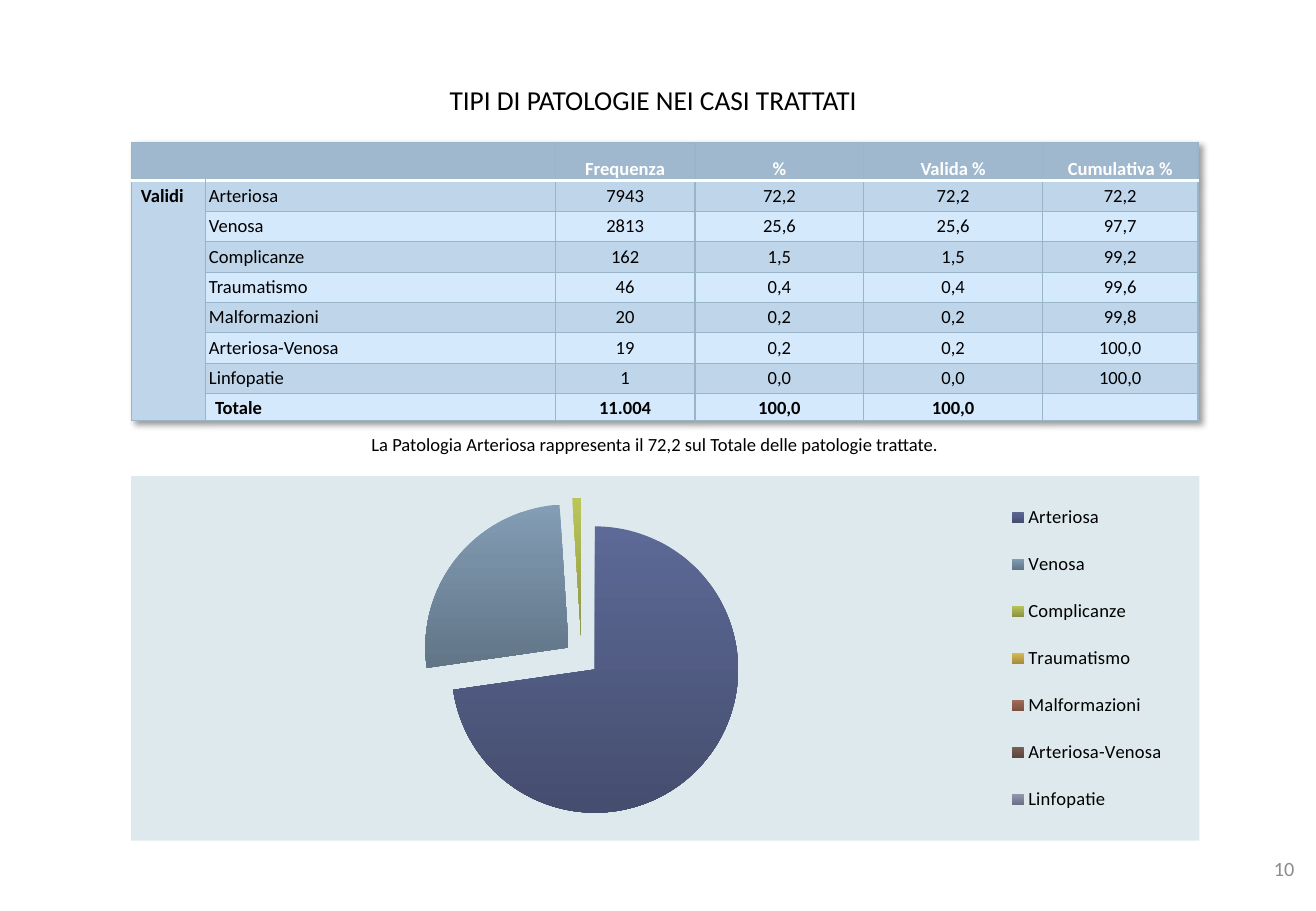
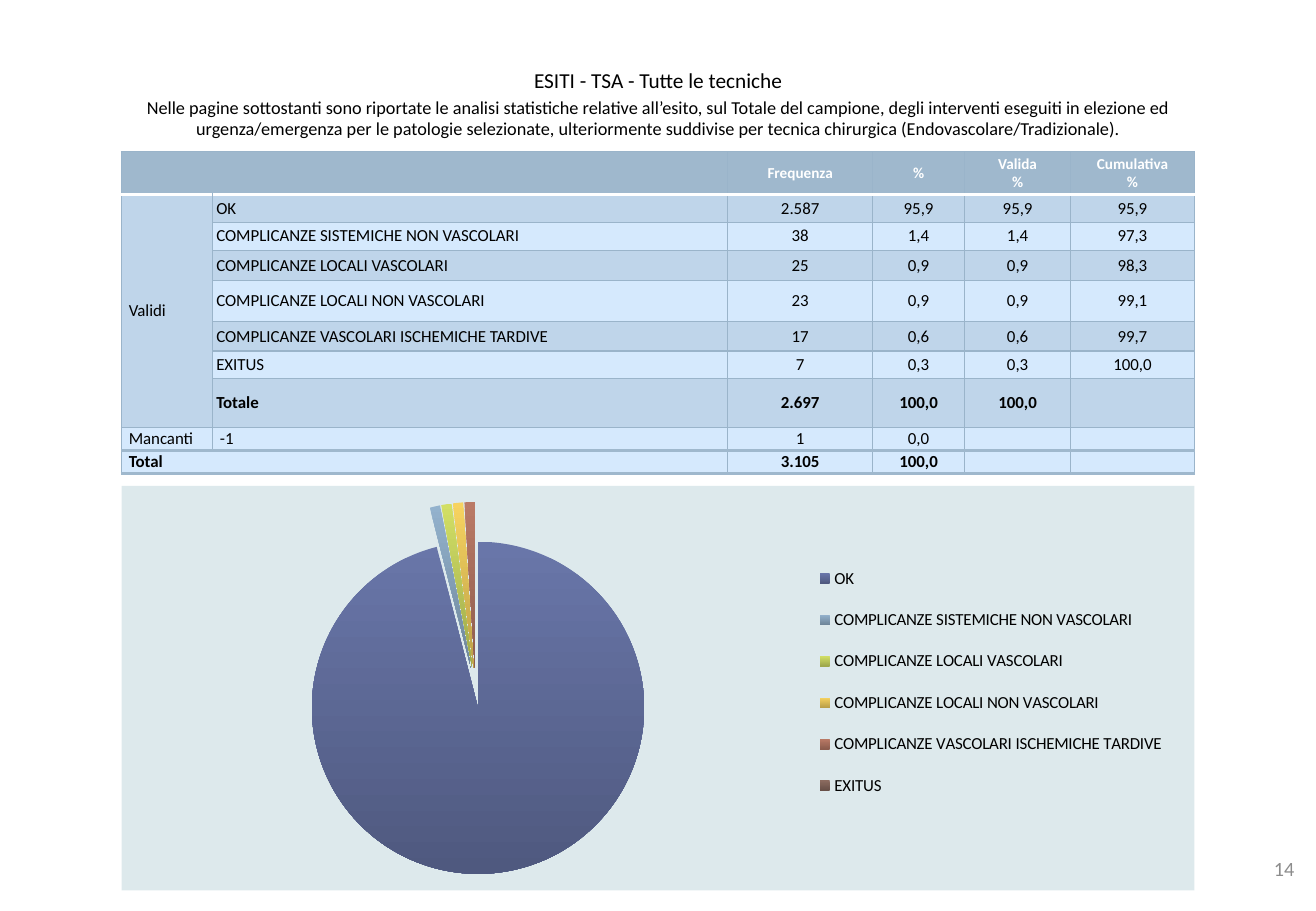
import lxml.etree
import pptx
import pptx.chart.data
import pptx.dml.color
import pptx.enum.chart
import pptx.enum.text
import pptx.oxml
import pptx.oxml.ns
import pptx.util

Inches, Pt, qn = pptx.util.Inches, pptx.util.Pt, pptx.oxml.ns.qn
NS = pptx.oxml.ns.nsdecls("a", "c")
ALIGN = pptx.enum.text.PP_ALIGN
ANCHOR = pptx.enum.text.MSO_ANCHOR

FONT = "Calibri"
BLACK, WHITE, GREY = "000000", "FFFFFF", "8C8C8C"
HEAD, DARK, LIGHT, EDGE = "9FB8CD", "BFD5EA", "D5E9FD", "9AB4CA"
PANEL = "DDE9EC"
SLICES = ["6C7AAE", "98B7D3", "D9E668", "FFDA63", "C07E69", "8F6E62", "AAB0CE"]


def rgb(value, shade=1):
    color = pptx.dml.color.RGBColor.from_string(value)
    return pptx.dml.color.RGBColor(*(round(part * shade) for part in color))


def layout(x, y, w, h, target=""):
    return pptx.oxml.parse_xml(
        f'<c:layout {NS}><c:manualLayout>{target}'
        '<c:xMode val="edge"/><c:yMode val="edge"/>'
        f'<c:x val="{x}"/><c:y val="{y}"/><c:w val="{w}"/><c:h val="{h}"/>'
        '</c:manualLayout></c:layout>')


pages = [
    dict(
        number="10",
        title=[("TIPI DI PATOLOGIE NEI CASI TRATTATI", 16.2)],
        title_box=(0.5, 0.62, 9.75, 0.4),
        caption="La Patologia Arteriosa rappresenta il 72,2 sul Totale delle patologie trattate.",
        left=1.08, top=1.17,
        cols=[0.61, 2.88, 1.15, 1.39, 1.47, 1.28],
        heights=[0.32] + [0.25] * 7 + [0.22],
        rows=[
            ["", "", "Frequenza", "%", "Valida %", "Cumulativa %"],
            ["Validi", "Arteriosa", "7943", "72,2", "72,2", "72,2"],
            ["", "Venosa", "2813", "25,6", "25,6", "97,7"],
            ["", "Complicanze", "162", "1,5", "1,5", "99,2"],
            ["", "Traumatismo", "46", "0,4", "0,4", "99,6"],
            ["", "Malformazioni", "20", "0,2", "0,2", "99,8"],
            ["", "Arteriosa-Venosa", "19", "0,2", "0,2", "100,0"],
            ["", "Linfopatie", "1", "0,0", "0,0", "100,0"],
            ["", "Totale", "11.004", "100,0", "100,0", ""],
        ],
        merges=[(0, 0, 0, 1), (1, 0, 8, 0)],
        size=11, head_size=11, head_anchor=ANCHOR.BOTTOM, spacing=1.15,
        side_anchor=ANCHOR.TOP, side_bold=True, pad=0.08, wide_rows=[8],
        thick_edges={1: WHITE}, shadow=True,
        chart_box=(1.08, 3.92, 8.79, 3), values=[72, 26, 1, 0, 0, 0, 0],
        shades=(0.86, 0.64),
        plot=(0.022, 0.06, 0.8, 0.88), legend=(0.81, 0.015, 0.17, 0.97),
    ),
    dict(
        number="14",
        title=[
            ("ESITI - TSA - Tutte le tecniche", 12.6),
            ("Nelle pagine sottostanti sono riportate le analisi statistiche relative "
             "all’esito, sul Totale del campione, degli interventi eseguiti in elezione ed "
             "urgenza/emergenza per le patologie selezionate, ulteriormente suddivise per "
             "tecnica chirurgica (Endovascolare/Tradizionale).", 10.8),
        ],
        title_box=(1, 0.5, 8.83, 0.7),
        caption="",
        left=1, top=1.25,
        cols=[0.75, 4.24, 1.19, 0.76, 0.87, 1.02],
        heights=[0.35, 0.23, 0.23, 0.25, 0.34, 0.24, 0.23, 0.4, 0.19, 0.19],
        rows=[
            ["", "", "Frequenza", "%", "Valida\n%", "Cumulativa\n%"],
            ["Validi", "OK", "2.587", "95,9", "95,9", "95,9"],
            ["", "COMPLICANZE SISTEMICHE NON VASCOLARI", "38", "1,4", "1,4", "97,3"],
            ["", "COMPLICANZE LOCALI VASCOLARI", "25", "0,9", "0,9", "98,3"],
            ["", "COMPLICANZE LOCALI NON VASCOLARI", "23", "0,9", "0,9", "99,1"],
            ["", "COMPLICANZE VASCOLARI ISCHEMICHE TARDIVE", "17", "0,6", "0,6", "99,7"],
            ["", "EXITUS", "7", "0,3", "0,3", "100,0"],
            ["", "Totale", "2.697", "100,0", "100,0", ""],
            ["Mancanti", "-1", "1", "0,0", "", ""],
            ["Total", "", "3.105", "100,0", "", ""],
        ],
        merges=[(0, 0, 0, 1), (1, 0, 7, 0), (9, 0, 9, 1)],
        size=10, head_size=9, head_anchor=ANCHOR.MIDDLE, spacing=1.0,
        side_anchor=ANCHOR.MIDDLE, side_bold=False, pad=0.06, wide_rows=[8, 9],
        thick_edges={1: WHITE, 9: HEAD, 10: HEAD}, shadow=False,
        chart_box=(1, 4, 8.83, 3.33), values=[96, 1, 1, 1, 1, 0],
        shades=(0.97, 0.73),
        plot=(0.02, 0.04, 0.62, 0.92), legend=(0.64, 0.15, 0.34, 0.67),
    ),
]

prs = pptx.Presentation()
prs.slide_width, prs.slide_height = Inches(10.83), Inches(7.5)

for page in pages:
    s = prs.slides.add_slide(prs.slide_layouts[5])
    title = s.shapes.title
    title.left, title.top, title.width, title.height = map(Inches, page["title_box"])
    tf = title.text_frame
    tf.text = "\n".join(text for text, size in page["title"])
    tf.word_wrap = True
    tf.auto_size = pptx.enum.text.MSO_AUTO_SIZE.NONE
    tf.vertical_anchor = ANCHOR.MIDDLE
    for i, (p, (text, size)) in enumerate(zip(tf.paragraphs, page["title"])):
        p.alignment = ALIGN.CENTER
        p.space_before = Pt(2 if i else 0)
        f = p.runs[0].font
        f.name, f.size, f.color.rgb = FONT, Pt(size), rgb(BLACK)

    labels = [(page["number"], (9.87, 6.95, 0.88, 0.4), 12, GREY, ALIGN.RIGHT)]
    if page["caption"]:
        labels.append((page["caption"], (2.08, 3.46, 6.62, 0.4), 11, BLACK, ALIGN.CENTER))
    for text, box, size, color, align in labels:
        tf = s.shapes.add_textbox(*map(Inches, box)).text_frame
        tf.text = text
        tf.word_wrap = True
        tf.vertical_anchor = ANCHOR.MIDDLE
        p = tf.paragraphs[0]
        p.alignment = align
        f = p.runs[0].font
        f.name, f.size, f.color.rgb = FONT, Pt(size), rgb(color)

    rows, cols, heights = page["rows"], page["cols"], page["heights"]
    tbl = s.shapes.add_table(
        len(rows), len(cols), Inches(page["left"]), Inches(page["top"]),
        Inches(sum(cols)), Inches(sum(heights))).table
    tbl.horz_banding = False
    for col, width in zip(tbl.columns, cols):
        col.width = Inches(width)
    for row, height in zip(tbl.rows, heights):
        row.height = Inches(height)
    if page["shadow"]:
        tbl._tbl.tblPr.insert(0, pptx.oxml.parse_xml(
            f'<a:effectLst {NS}><a:outerShdw blurRad="50800" dist="38100" dir="2700000" '
            'algn="tl" rotWithShape="0"><a:srgbClr val="000000"><a:alpha val="40000"/>'
            '</a:srgbClr></a:outerShdw></a:effectLst>'))

    for i, row in enumerate(rows):
        total = row[0] == "Total" or row[1] == "Totale"
        for j, text in enumerate(row):
            cell = tbl.cell(i, j)
            header, side = i == 0, j == 0
            wide = header or side or i in page["wide_rows"]
            cell.margin_left = cell.margin_right = Inches(page["pad"] if wide else 0.03)
            cell.margin_top = cell.margin_bottom = Inches(0 if wide else 0.03)
            cell.vertical_anchor = ANCHOR.MIDDLE
            if header:
                cell.vertical_anchor = page["head_anchor"]
            elif side:
                cell.vertical_anchor = page["side_anchor"]
            body = DARK if i % 2 and row[0] != "Total" else LIGHT
            cell.fill.solid()
            cell.fill.fore_color.rgb = rgb(HEAD if header else body)

            size = page["head_size"] if header else page["size"]
            cell.text_frame.text = text
            for p in cell.text_frame.paragraphs:
                p.alignment = ALIGN.CENTER if j > 1 else ALIGN.LEFT
                p.line_spacing = page["spacing"] if wide else 1.0
                for r in p.runs:
                    f = r.font
                    f.name, f.size = FONT, Pt(size)
                    f.bold = header or total or text == "Validi" and page["side_bold"]
                    f.color.rgb = rgb(WHITE if header else BLACK)
                if not text:
                    lxml.etree.SubElement(p._p, qn("a:endParaRPr")).set("sz", str(size * 100))

            thick = page["thick_edges"]
            edges = [("lnL", None), ("lnR", None), ("lnT", thick.get(i)), ("lnB", thick.get(i + 1))]
            for k, (tag, color) in enumerate(edges):
                cell._tc.tcPr.insert(k, pptx.oxml.parse_xml(
                    f'<a:{tag} {NS} w="{Pt(2 if color else 0.75)}"><a:solidFill>'
                    f'<a:srgbClr val="{color or EDGE}"/></a:solidFill></a:{tag}>'))
    for top, left, bottom, right in page["merges"]:
        tbl.cell(top, left).merge(tbl.cell(bottom, right))

    values = page["values"]
    data = pptx.chart.data.CategoryChartData(number_format="0")
    data.categories = [row[1] for row in rows[1:len(values) + 1]]
    data.add_series("Series 1", values)
    chart = s.shapes.add_chart(
        pptx.enum.chart.XL_CHART_TYPE.PIE, *map(Inches, page["chart_box"]), data).chart
    chart.has_title = False
    chart.font.name, chart.font.size = FONT, Pt(10)
    chart.font.color.rgb = rgb(BLACK)
    chart._chartSpace.find(qn("c:txPr")).addprevious(pptx.oxml.parse_xml(
        f'<c:spPr {NS}><a:solidFill><a:srgbClr val="{PANEL}"/></a:solidFill>'
        '<a:ln><a:noFill/></a:ln></c:spPr>'))

    plot = chart.plots[0]
    plot.vary_by_categories = True
    ser = plot.series[0]
    ser._element.find(qn("c:tx")).addnext(
        pptx.oxml.parse_xml(f'<c:explosion {NS} val="12"/>'))
    for i, color in enumerate(SLICES[:len(values)]):
        fill = ser.points[i].format.fill
        fill.gradient()
        fill.gradient_angle = 270
        for stop, shade in zip(fill.gradient_stops, page["shades"]):
            stop.color.rgb = rgb(color, shade)

    chart.has_legend = True
    legend = chart.legend
    legend.position = pptx.enum.chart.XL_LEGEND_POSITION.RIGHT
    legend.include_in_layout = False
    legend.font.name, legend.font.size = FONT, Pt(page["size"])
    legend.font.color.rgb = rgb(BLACK)
    area = chart._chartSpace.chart.plotArea
    for parent in (area, legend._element):
        for old in parent.findall(qn("c:layout")):
            parent.remove(old)
    area.insert(0, layout(*page["plot"], target='<c:layoutTarget val="inner"/>'))
    legend._element.find(qn("c:legendPos")).addnext(layout(*page["legend"]))

prs.save("out.pptx")
